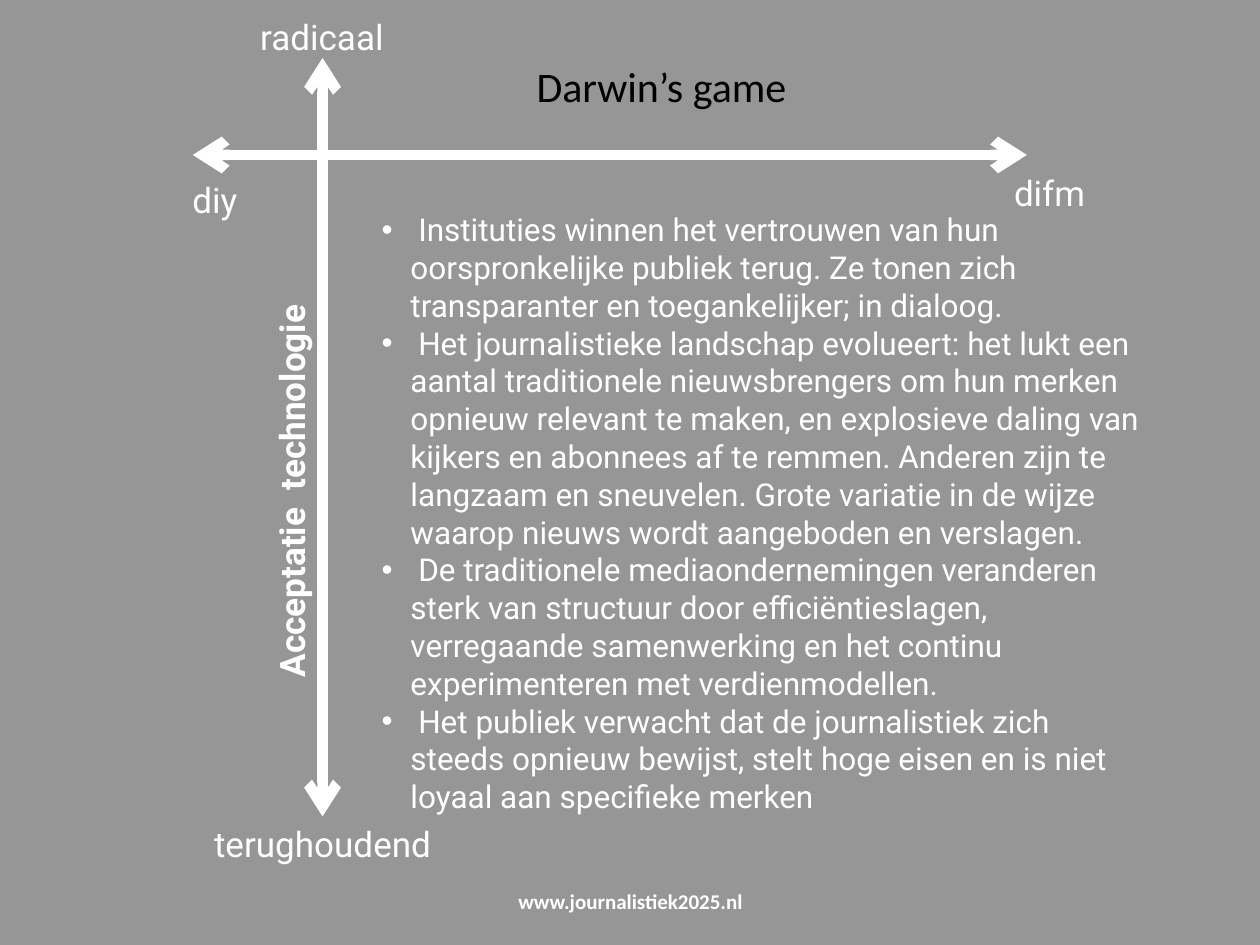
from typing import NamedTuple

from lxml import etree
from pptx import Presentation
from pptx.dml.color import RGBColor
from pptx.enum.shapes import MSO_CONNECTOR
from pptx.enum.text import MSO_ANCHOR, MSO_AUTO_SIZE, PP_ALIGN
from pptx.oxml.ns import qn
from pptx.util import Inches, Pt

LEFT, CENTER, RIGHT = PP_ALIGN.LEFT, PP_ALIGN.CENTER, PP_ALIGN.RIGHT
TOP, MIDDLE = MSO_ANCHOR.TOP, MSO_ANCHOR.MIDDLE
GROW, FIXED = MSO_AUTO_SIZE.SHAPE_TO_FIT_TEXT, MSO_AUTO_SIZE.NONE
STRAIGHT = MSO_CONNECTOR.STRAIGHT

GREY, WHITE, BLACK = "969696", "FFFFFF", "000000"
BULLET_INDENT = Inches(0.23)


class Axis(NamedTuple):
    x1: float
    y1: float
    x2: float
    y2: float


class Label(NamedTuple):
    paragraphs: list[str]
    left: float
    top: float
    width: float
    height: float = 0.44
    size: int = 20
    font: str = "Roboto"
    color: str = WHITE
    align: PP_ALIGN = CENTER
    bold: bool = False
    rotation: int = 0
    bulleted: bool = False
    anchor: MSO_ANCHOR = TOP
    auto_size: MSO_AUTO_SIZE = GROW


DEVELOPMENTS = [
    " Instituties winnen het vertrouwen van hun oorspronkelijke publiek terug. "
    "Ze tonen zich transparanter en toegankelijker; in dialoog.",
    " Het journalistieke landschap evolueert: het lukt een aantal traditionele "
    "nieuwsbrengers om hun merken opnieuw relevant te maken, en explosieve daling "
    "van kijkers en abonnees af te remmen. Anderen zijn te langzaam en sneuvelen. "
    "Grote variatie in de wijze waarop nieuws wordt aangeboden en verslagen.",
    " De traditionele mediaondernemingen veranderen sterk van structuur door "
    "efficiëntieslagen, verregaande samenwerking en het continu experimenteren "
    "met verdienmodellen.",
    " Het publiek verwacht dat de journalistiek zich steeds opnieuw bewijst, "
    "stelt hoge eisen en is niet loyaal aan specifieke merken",
]

AXES = [Axis(2.56, 6.48, 2.56, 0.46), Axis(1.53, 1.23, 8.15, 1.23)]

LABELS = [
    # Axis name and the ends of both axes
    Label(["Acceptatie  technologie"], 0.19, 3.13, 4.25, align=LEFT, bold=True, rotation=270),
    Label(["difm"], 7.12, 1.31, 2.42),
    Label(["diy"], 0.42, 1.37, 2.57),
    Label(["radicaal"], 1.41, 0.07, 2.29),
    Label(["terughoudend"], 1.42, 6.48, 2.28),
    # Scenario text, title and footer
    Label(DEVELOPMENTS, 2.93, 1.62, 6.23, 4.9, size=18, align=LEFT, bulleted=True),
    Label(["Darwin’s game"], 1.22, 0.43, 5.12, 0.5, size=24, font="Calibri",
          color=BLACK, align=RIGHT),
    Label(["www.journalistiek2025.nl"], 3.42, 6.95, 3.17, 0.4, size=12, font="Calibri",
          bold=True, anchor=MIDDLE, auto_size=FIXED),
]


def rgb(color: str) -> RGBColor:
    return RGBColor.from_string(color)


def add_bullet(paragraph) -> None:
    properties = paragraph._p.get_or_add_pPr()
    properties.set("marL", str(BULLET_INDENT))
    properties.set("indent", str(-BULLET_INDENT))
    etree.SubElement(properties, qn("a:buFont")).set("typeface", "Arial")
    etree.SubElement(properties, qn("a:buChar")).set("char", "•")


def draw_axis(slide, axis: Axis) -> None:
    arrow = slide.shapes.add_connector(STRAIGHT, *map(Inches, axis))
    arrow.line.color.rgb = rgb(WHITE)
    arrow.line.width = Pt(6)
    outline = arrow.line._get_or_add_ln()
    for end in ("a:headEnd", "a:tailEnd"):
        etree.SubElement(outline, qn(end)).set("type", "arrow")
    etree.SubElement(arrow._element.spPr, qn("a:effectLst"))


def draw_label(slide, label: Label) -> None:
    position = (label.left, label.top, label.width, label.height)
    box = slide.shapes.add_textbox(*map(Inches, position))
    box.rotation = label.rotation
    frame = box.text_frame
    frame_format = {
        "word_wrap": True,
        "auto_size": label.auto_size,
        "vertical_anchor": label.anchor,
    }
    for name, value in frame_format.items():
        setattr(frame, name, value)

    frame.text = "\n".join(label.paragraphs)
    font_format = {"name": label.font, "size": Pt(label.size), "bold": label.bold}
    for paragraph in frame.paragraphs:
        paragraph.alignment = label.align
        if label.bulleted:
            add_bullet(paragraph)
        font = paragraph.runs[0].font
        for name, value in font_format.items():
            setattr(font, name, value)
        font.color.rgb = rgb(label.color)


def main() -> None:
    presentation = Presentation()
    presentation.slide_width, presentation.slide_height = Inches(10), Inches(7.5)
    slide = presentation.slides.add_slide(presentation.slide_layouts[6])
    slide.background.fill.solid()
    slide.background.fill.fore_color.rgb = rgb(GREY)

    for axis in AXES:
        draw_axis(slide, axis)
    for label in LABELS:
        draw_label(slide, label)

    presentation.save("out.pptx")


if __name__ == "__main__":
    main()
